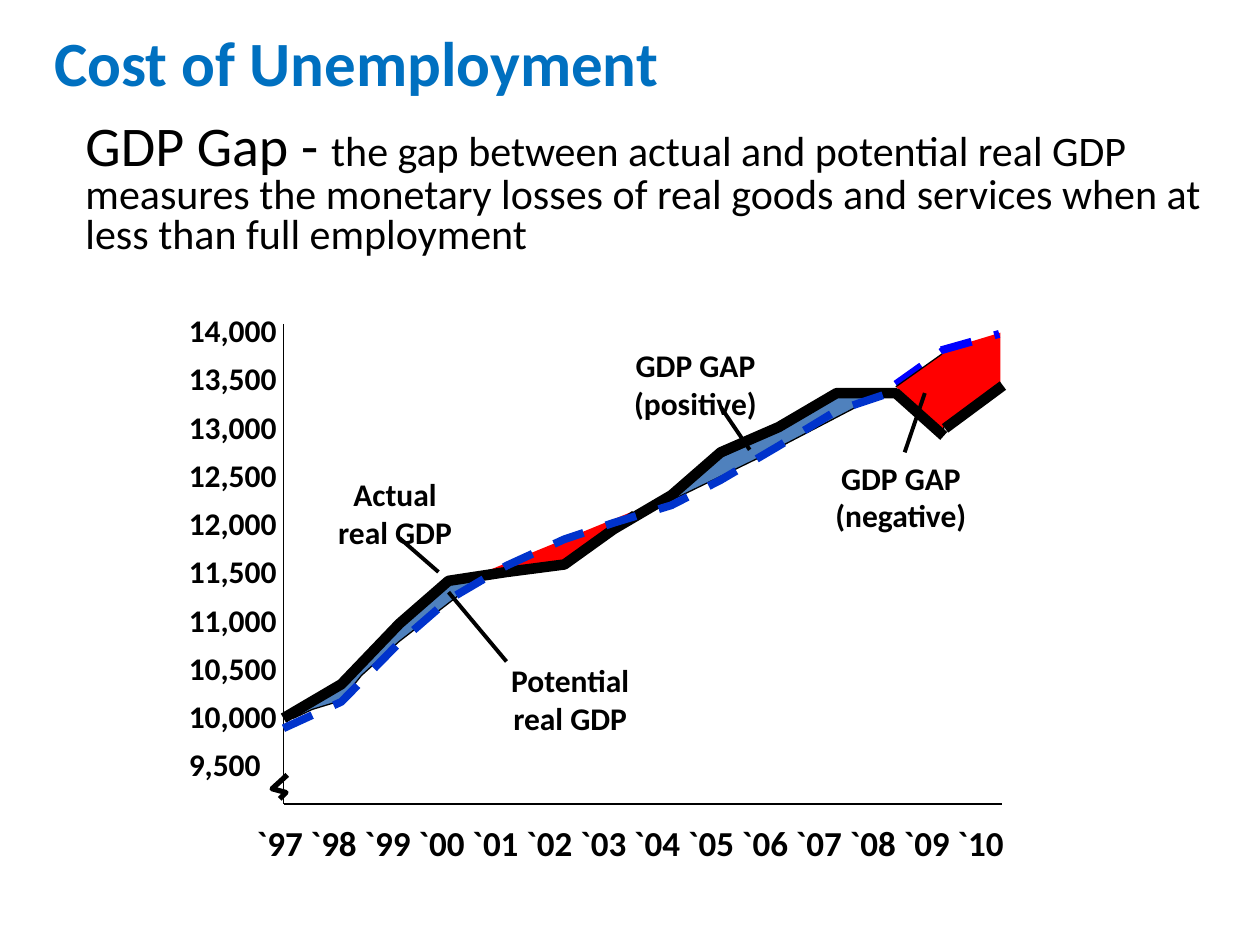
"""Build the Cost of Unemployment slide with its GDP gap diagram."""
from dataclasses import dataclass
from typing import Optional

from lxml.etree import SubElement
from pptx import Presentation
from pptx.dml.color import RGBColor
from pptx.enum.dml import MSO_LINE
from pptx.enum.shapes import MSO_CONNECTOR
from pptx.enum.text import MSO_ANCHOR, PP_ALIGN
from pptx.oxml.ns import qn
from pptx.util import Inches, Pt

FONT = "Calibri"
BLACK = RGBColor(0x00, 0x00, 0x00)
TITLE_BLUE = RGBColor(0x00, 0x70, 0xC0)
GAP_BLUE = RGBColor(0x4F, 0x81, 0xBD)
GAP_RED = RGBColor(0xFF, 0x00, 0x00)
POTENTIAL_BLUE = RGBColor(0x00, 0x33, 0xCC)
BRIGHT_BLUE = RGBColor(0x00, 0x00, 0xFF)


@dataclass
class Label:
    text: str
    left: float
    top: float
    width: float
    height: float = 0.33
    size: float = 18
    align: PP_ALIGN = PP_ALIGN.LEFT


@dataclass
class Line:
    start: tuple[float, float]
    end: tuple[float, float]
    width: float = 2.25
    color: RGBColor = BLACK
    dashed: bool = False


@dataclass
class Outline:
    points: list[tuple[float, float]]
    fill: Optional[RGBColor] = None
    width: float = 0.75
    color: RGBColor = BLACK
    dashed: bool = False
    closed: bool = False


TOP_LABEL, LABEL_STEP = 2.42, 0.383
Y_LABELS = [
    Label(f"{14000 - 500 * i:,}", 1.4, TOP_LABEL + LABEL_STEP * i, 1)
    for i in range(10)
]
YEARS = " ".join(f"`{year % 100:02d}" for year in range(1997, 2011))
LABELS = Y_LABELS + [
    Label(YEARS, 1.94, 6.47, 6.48, 0.35, size=20),
    Label("GDP GAP (positive)", 4.79, 2.7, 1.46, 0.57, align=PP_ALIGN.CENTER),
    Label("Actual real GDP", 2.48, 3.72, 1.31, 0.57, align=PP_ALIGN.CENTER),
    Label("Potential real GDP", 3.87, 5.2, 1.31, 0.57, align=PP_ALIGN.CENTER),
    Label("GDP GAP (negative)", 6.42, 3.59, 1.46, 0.57, align=PP_ALIGN.CENTER),
]

AXES = [
    Line((2.25, 2.57), (2.25, 6.38), 0.75),
    Line((2.25, 6.38), (7.95, 6.38), 0.75),
]
LEADERS = [
    Line((3.17, 4.27), (3.48, 4.54)),
    Line((3.56, 4.7), (4.02, 5.25)),
    Line((7.34, 3.12), (7.18, 3.59)),
    Line((5.95, 3.57), (5.72, 3.23)),
]
LAST_YEAR = [
    Line((7.47, 2.78), (7.93, 2.65), 4.5, BRIGHT_BLUE, dashed=True),
    Line((7.5, 3.4), (7.96, 3.06), 6),
]
POTENTIAL_RISE = Line((7.11, 3.05), (7.49, 2.78), 4.5, BRIGHT_BLUE, dashed=True)

AXIS_BREAK = Outline([(2.28, 6.15), (2.16, 6.26), (2.27, 6.29), (2.22, 6.34)], width=3)
GAPS = [
    Outline([(3.87, 4.53), (4.48, 4.45), (5.02, 4.06)], GAP_RED),
    Outline([(7.11, 3.07), (7.49, 2.8), (7.49, 3.41)], GAP_RED),
    Outline([(5.33, 3.97), (5.72, 3.63), (6.18, 3.42), (6.64, 3.15), (6.95, 3.15),
             (6.03, 3.63)], GAP_BLUE, closed=True),
    Outline([(2.33, 5.7), (2.71, 5.43), (3.56, 4.61), (3.79, 4.61), (3.17, 5.09),
             (2.87, 5.36), (2.71, 5.56), (2.48, 5.63)], GAP_BLUE, closed=True),
]
ACTUAL = Outline(
    [(2.25, 5.7), (2.71, 5.43), (3.17, 4.95), (3.56, 4.61), (4.02, 4.54), (4.48, 4.48),
     (4.87, 4.2), (5.33, 3.93), (5.72, 3.59), (6.18, 3.39), (6.64, 3.12), (7.11, 3.12),
     (7.49, 3.46)], width=6)
POTENTIAL = Outline(
    [(2.25, 5.78), (2.71, 5.57), (3.17, 5.1), (3.56, 4.76), (4.02, 4.49), (4.48, 4.28),
     (4.87, 4.15), (5.33, 4.01), (5.72, 3.81), (6.18, 3.54), (6.64, 3.26), (7.03, 3.13),
     (7.11, 3.06)], width=4.5, color=POTENTIAL_BLUE, dashed=True)
LAST_GAP = Outline([(7.48, 2.78), (7.94, 2.64), (7.94, 3.12), (7.48, 3.39)],
                   GAP_RED, width=0, closed=True)


def format_run(r, size: float, color: RGBColor = BLACK, bold: bool = True) -> None:
    r.font.name = FONT
    r.font.size = Pt(size)
    r.font.bold = bold
    r.font.color.rgb = color


def format_line(line, item) -> None:
    line.color.rgb = item.color
    line.width = Pt(item.width)
    if item.dashed:
        line.dash_style = MSO_LINE.DASH


def add_label(s, label: Label) -> None:
    sp = s.shapes.add_textbox(Inches(label.left), Inches(label.top),
                              Inches(label.width), Inches(label.height))
    tf = sp.text_frame
    tf.word_wrap = True
    p = tf.paragraphs[0]
    p.text = label.text
    p.alignment = label.align
    format_run(p.runs[0], label.size)


def add_line(s, line: Line) -> None:
    sp = s.shapes.add_connector(MSO_CONNECTOR.STRAIGHT,
                                *map(Inches, line.start + line.end))
    format_line(sp.line, line)
    SubElement(sp._element.spPr, qn("a:effectLst"))


def add_outline(s, outline: Outline) -> None:
    points = [(Inches(x), Inches(y)) for x, y in outline.points]
    builder = s.shapes.build_freeform(*points[0])
    builder.add_line_segments(points[1:], close=outline.closed)
    sp = builder.convert_to_shape()
    sp.shadow.inherit = False
    if outline.fill is None:
        sp.fill.background()
    else:
        sp.fill.solid()
        sp.fill.fore_color.rgb = outline.fill
    if outline.width:
        format_line(sp.line, outline)
    else:
        sp.line.fill.background()


def add_title(s) -> None:
    sp = s.shapes.title
    sp.left, sp.top, sp.width, sp.height = map(Inches, (0.33, 0.24, 9.42, 0.6))
    tf = sp.text_frame
    tf.text = "Cost of Unemployment"
    tf.vertical_anchor = MSO_ANCHOR.MIDDLE
    p = tf.paragraphs[0]
    p.alignment = PP_ALIGN.LEFT
    p.line_spacing = 0.8
    format_run(p.runs[0], 36, TITLE_BLUE)


def add_definition(s) -> None:
    sp = s.shapes.add_textbox(*map(Inches, (0.58, 0.93, 9.25, 1.59)))
    tf = sp.text_frame
    tf.word_wrap = True
    p = tf.paragraphs[0]
    p.line_spacing = 0.8
    for text, size in (
        ("GDP Gap - ", 32),
        ("the gap between actual and potential real GDP measures the monetary losses "
         "of real goods and services when at less than full employment", 24),
    ):
        r = p.add_run()
        r.text = text
        format_run(r, size, bold=False)


def main() -> None:
    prs = Presentation()
    prs.slide_width, prs.slide_height = Inches(10), Inches(7.5)
    s = prs.slides.add_slide(prs.slide_layouts[5])
    add_title(s)
    add_definition(s)
    for line in AXES:
        add_line(s, line)
    for label in LABELS:
        add_label(s, label)
    add_line(s, POTENTIAL_RISE)
    for outline in [AXIS_BREAK, *GAPS, ACTUAL, POTENTIAL, LAST_GAP]:
        add_outline(s, outline)
    for line in LEADERS + LAST_YEAR:
        add_line(s, line)
    prs.save("out.pptx")


if __name__ == "__main__":
    main()
